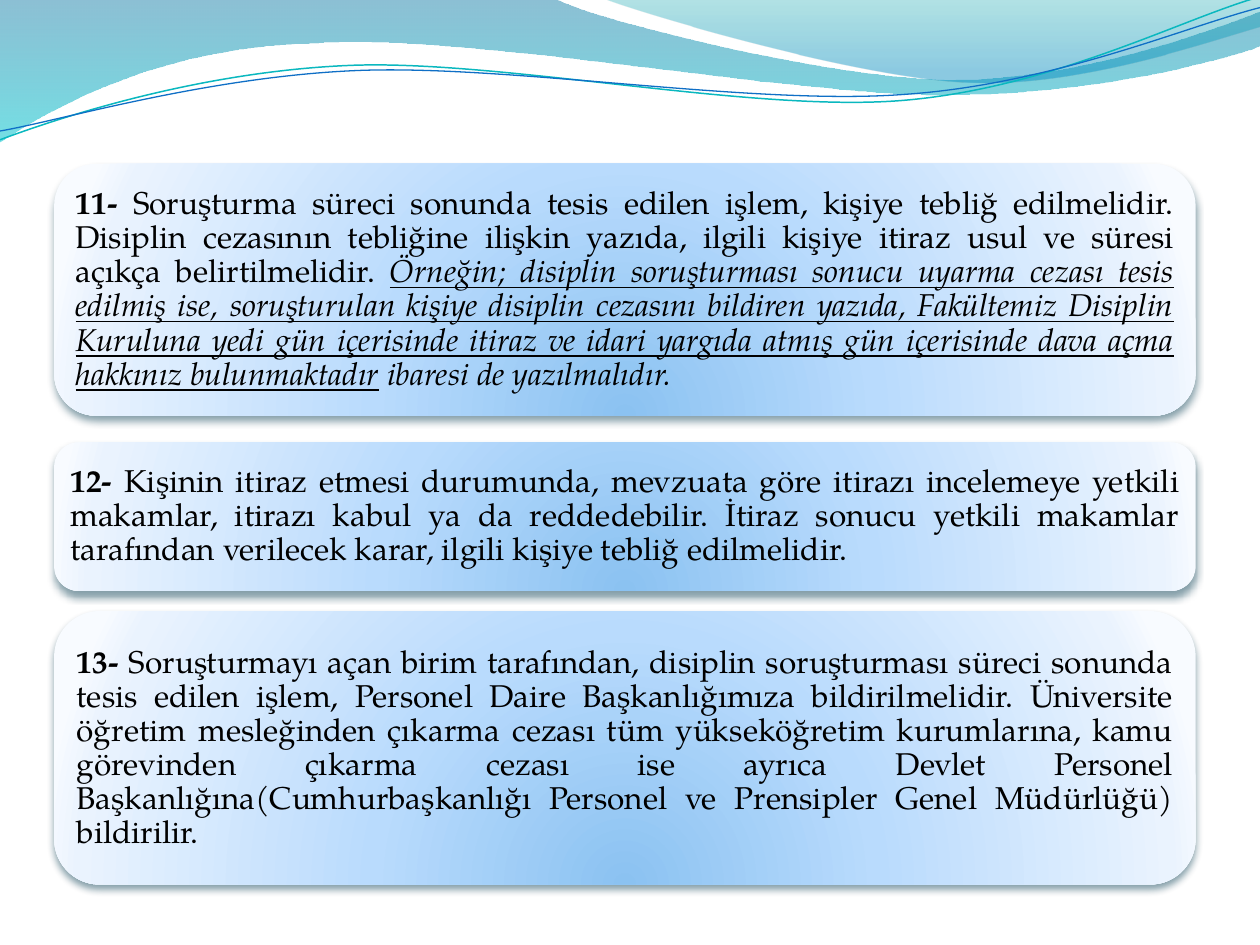
from dataclasses import dataclass
from math import cos, radians, sin

from lxml.etree import SubElement
from pptx import Presentation
from pptx.dml.color import RGBColor
from pptx.enum.shapes import MSO_SHAPE as Preset
from pptx.enum.text import MSO_ANCHOR as Anchor, PP_ALIGN as Align
from pptx.oxml.ns import qn
from pptx.util import Inches, Pt


@dataclass(frozen=True)
class Theme:
    """Gradient stops are (position %, colour, opacity %)."""
    font: str = "TeX Gyre Pagella"
    body_size: float = 18
    ink: str = "000000"
    wave_left: tuple = ((0, "0074A1", 45), (100, "00C6CF", 55))
    wave_right: tuple = ((0, "00A1A9", 30), (80, "008BBF", 45))
    teal_line: str = "0AB8BF"
    blue_line: str = "0F6FC6"
    card: tuple = ((0, "8BC2F1", 100), (43, "B9DBFD", 100),
                   (93, "EAF3FE", 100), (100, "F8FBFF", 100))
    shadow: str = "00374C"


def add_color(parent, color, opacity):
    node = SubElement(parent, qn("a:srgbClr"), val=color)
    if opacity < 100:
        SubElement(node, qn("a:alpha"), val=str(opacity * 1000))


class SlideBuilder:
    def __init__(self, slide, theme):
        self.slide = slide
        self.theme = theme

    def gradient(self, shape, stops, radial=False):
        shape.fill.background()
        no_fill = shape._element.spPr.find(qn("a:noFill"))
        fill = no_fill.makeelement(qn("a:gradFill"), {"rotWithShape": "1"})
        no_fill.getparent().replace(no_fill, fill)
        stop_list = SubElement(fill, qn("a:gsLst"))
        for position, color, opacity in stops:
            stop = SubElement(stop_list, qn("a:gs"), pos=str(position * 1000))
            add_color(stop, color, opacity)
        if radial:
            path = SubElement(fill, qn("a:path"), path="circle")
            SubElement(path, qn("a:fillToRect"), l="50000", t="130000", r="50000", b="-30000")
        else:
            SubElement(fill, qn("a:lin"), ang="5400000", scaled="0")

    def soft_shadow(self, shape):
        effects = shape._element.spPr.find(qn("a:effectLst"))
        shadow = SubElement(effects, qn("a:outerShdw"), blurRad=str(Pt(4.5)),
                            dist=str(Pt(3)), dir="5400000", rotWithShape="0")
        add_color(shadow, self.theme.shadow, 48)

    def outline(self, box, start, segments, close, rotation=0):
        """Freeform in a box; segments are lines (2 numbers) or cubic curves (6).

        Coordinates are where the points appear on the slide after rotation.
        """
        left, top, width, height = box
        corners = [(left, top), (left + width, top), (left + width, top + height),
                   (left, top + height)]
        corners = [(Inches(x), Inches(y)) for x, y in corners]
        builder = self.slide.shapes.build_freeform(*corners[0])
        builder.add_line_segments(corners[1:], close=close)
        shape = builder.convert_to_shape()
        shape.shadow.inherit = False
        shape.rotation = rotation

        path = next(shape._element.iter(qn("a:path")))
        for command in list(path):
            path.remove(command)
        turn = radians(-rotation)

        def add_command(tag, numbers):
            command = SubElement(path, qn(tag))
            for x, y in zip(numbers[::2], numbers[1::2]):
                dx, dy = x - left - width / 2, y - top - height / 2
                local_x = width / 2 + dx * cos(turn) - dy * sin(turn)
                local_y = height / 2 + dx * sin(turn) + dy * cos(turn)
                SubElement(command, qn("a:pt"), x=str(Inches(local_x)), y=str(Inches(local_y)))

        add_command("a:moveTo", start)
        for segment in segments:
            add_command("a:lnTo" if len(segment) == 2 else "a:cubicBezTo", segment)
        if close:
            SubElement(path, qn("a:close"))
        return shape

    def wave(self, box, start, segments, stops):
        shape = self.outline(box, start, segments, close=True)
        shape.line.fill.background()
        self.gradient(shape, stops)

    def curve(self, box, start, segments, color, width):
        shape = self.outline(box, start, segments, close=False, rotation=357.3)
        shape.fill.background()
        shape.line.color.rgb = RGBColor.from_string(color)
        shape.line.width = Pt(width)

    def card(self, top, height, runs):
        left, width = 0.43, 9.06
        shape = self.slide.shapes.add_shape(
            Preset.ROUNDED_RECTANGLE, Inches(left), Inches(top), Inches(width), Inches(height))
        shape.shadow.inherit = False
        shape.line.fill.background()
        self.gradient(shape, self.theme.card, radial=True)
        self.soft_shadow(shape)
        inset = 0.05 * height  # keeps the text clear of the rounded corners
        self.text(left + inset, top + inset, width - 2 * inset, height - 2 * inset, runs)

    def text(self, left, top, width, height, runs):
        """Justified paragraph; runs are (text, style letters out of b, i, u)."""
        box = self.slide.shapes.add_textbox(
            Inches(left), Inches(top), Inches(width), Inches(height))
        frame = box.text_frame
        frame.word_wrap = True
        frame.vertical_anchor = Anchor.MIDDLE
        frame.margin_left = frame.margin_right = Inches(0.07)
        frame.margin_top = frame.margin_bottom = Inches(0.07)
        paragraph = frame.paragraphs[0]
        paragraph.alignment = Align.JUSTIFY
        paragraph.line_spacing = 0.9
        paragraph.font.name = self.theme.font
        paragraph.font.size = Pt(self.theme.body_size)
        paragraph.font.color.rgb = RGBColor.from_string(self.theme.ink)
        for words, style in runs:
            run = paragraph.add_run()
            run.text = words
            font = run.font
            # Runs repeat the face because paragraph defaults are not drawn everywhere.
            font.name = self.theme.font
            font.size = Pt(self.theme.body_size)
            font.color.rgb = RGBColor.from_string(self.theme.ink)
            font.bold = "b" in style
            font.italic = "i" in style
            font.underline = "u" in style


RULES = [
    (1.3, 2, [
        ("11-", "b"),
        (" Soruşturma süreci sonunda tesis edilen işlem, kişiye tebliğ edilmelidir. "
         "Disiplin cezasının tebliğine ilişkin yazıda, ilgili kişiye itiraz usul ve süresi "
         "açıkça belirtilmelidir. ", ""),
        ("Örneğin; disiplin soruşturması sonucu uyarma cezası tesis edilmiş ise, "
         "soruşturulan kişiye disiplin cezasını bildiren yazıda, Fakültemiz Disiplin "
         "Kuruluna yedi gün içerisinde itiraz ve idari yargıda atmış gün içerisinde dava "
         "açma hakkınız bulunmaktadır", "iu"),
        (" ibaresi de yazılmalıdır.", "i"),
    ]),
    (3.51, 1.18, [
        ("12-", "b"),
        (" Kişinin itiraz etmesi durumunda, mevzuata göre itirazı incelemeye yetkili "
         "makamlar, itirazı kabul ya da reddedebilir. İtiraz sonucu yetkili makamlar "
         "tarafından verilecek karar, ilgili kişiye tebliğ edilmelidir.", ""),
    ]),
    (4.85, 2.17, [
        ("13- ", "b"),
        ("Soruşturmayı açan birim tarafından, disiplin soruşturması süreci sonunda tesis "
         "edilen işlem, Personel Daire Başkanlığımıza bildirilmelidir. Üniversite öğretim "
         "mesleğinden çıkarma cezası tüm yükseköğretim kurumlarına, kamu görevinden çıkarma "
         "cezası ise ayrıca Devlet Personel Başkanlığına(Cumhurbaşkanlığı Personel ve "
         "Prensipler Genel Müdürlüğü) bildirilir.", ""),
    ]),
]


def main():
    deck = Presentation()
    deck.slide_width, deck.slide_height = Inches(10), Inches(7.5)
    theme = Theme()
    page = SlideBuilder(deck.slides.add_slide(deck.slide_layouts[6]), theme)

    page.wave((-0.01, -0.01, 10.02, 1.14), (0, 0), [
        (4.4, -0.01), (4.76, 0.17, 6.64, 0.63, 7.58, 0.63), (8.53, 0.63, 9.58, 0.26, 10, 0.09),
        (10.01, 0.36), (9.83, 0.44, 8.7, 0.76, 7.46, 0.75), (6.22, 0.75, 3.82, 0.28, 2.57, 0.34),
        (1.29, 0.36, 0.46, 0.83, -0.01, 1.13), (0, 0)], theme.wave_left)
    page.wave((4.79, -0.01, 5.21, 0.7), (4.79, -0.01), [
        (5.09, 0.11, 6.82, 0.62, 7.69, 0.65), (8.56, 0.69, 9.61, 0.32, 10, 0.21),
        (10, 0), (4.79, -0.01)], theme.wave_right)
    page.curve((-0.02, 0.22, 10.02, 0.71), (0, 1.11), [
        (0.48, 0.93, 1.58, 0.57, 2.77, 0.52), (3.95, 0.47, 5.93, 0.89, 7.13, 0.8),
        (8.33, 0.71, 9.38, 0.15, 9.98, -0.02)], theme.teal_line, 0.85)
    page.curve((-0.02, 0.3, 10.03, 0.58), (0, 1.04), [
        (0.47, 0.96, 1.64, 0.61, 2.83, 0.56), (4.03, 0.51, 5.97, 0.84, 7.17, 0.75),
        (8.36, 0.67, 9.41, 0.21, 10, 0.06)], theme.blue_line, 0.75)

    for top, height, runs in RULES:
        page.card(top, height, runs)

    deck.save("out.pptx")


if __name__ == "__main__":
    main()
